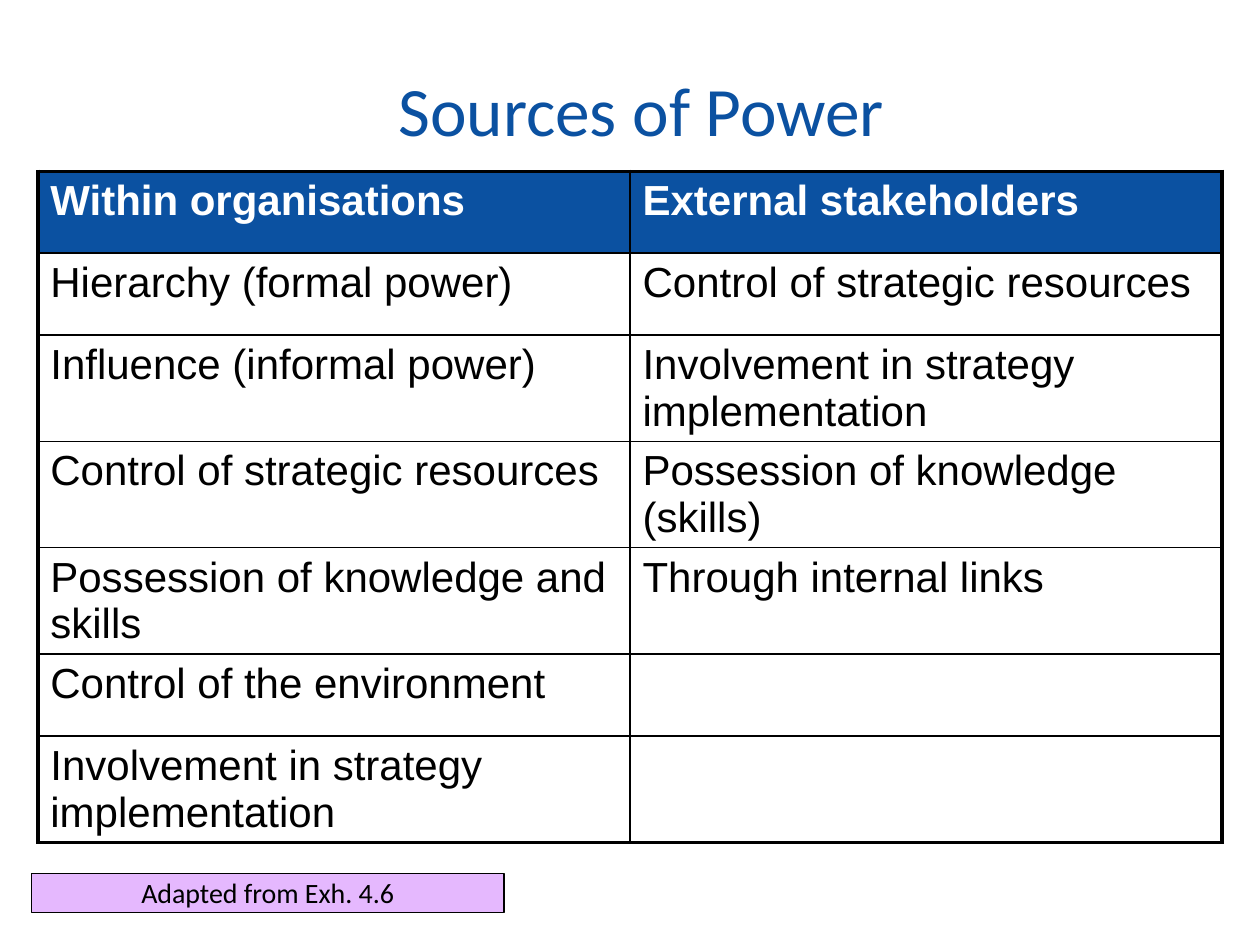
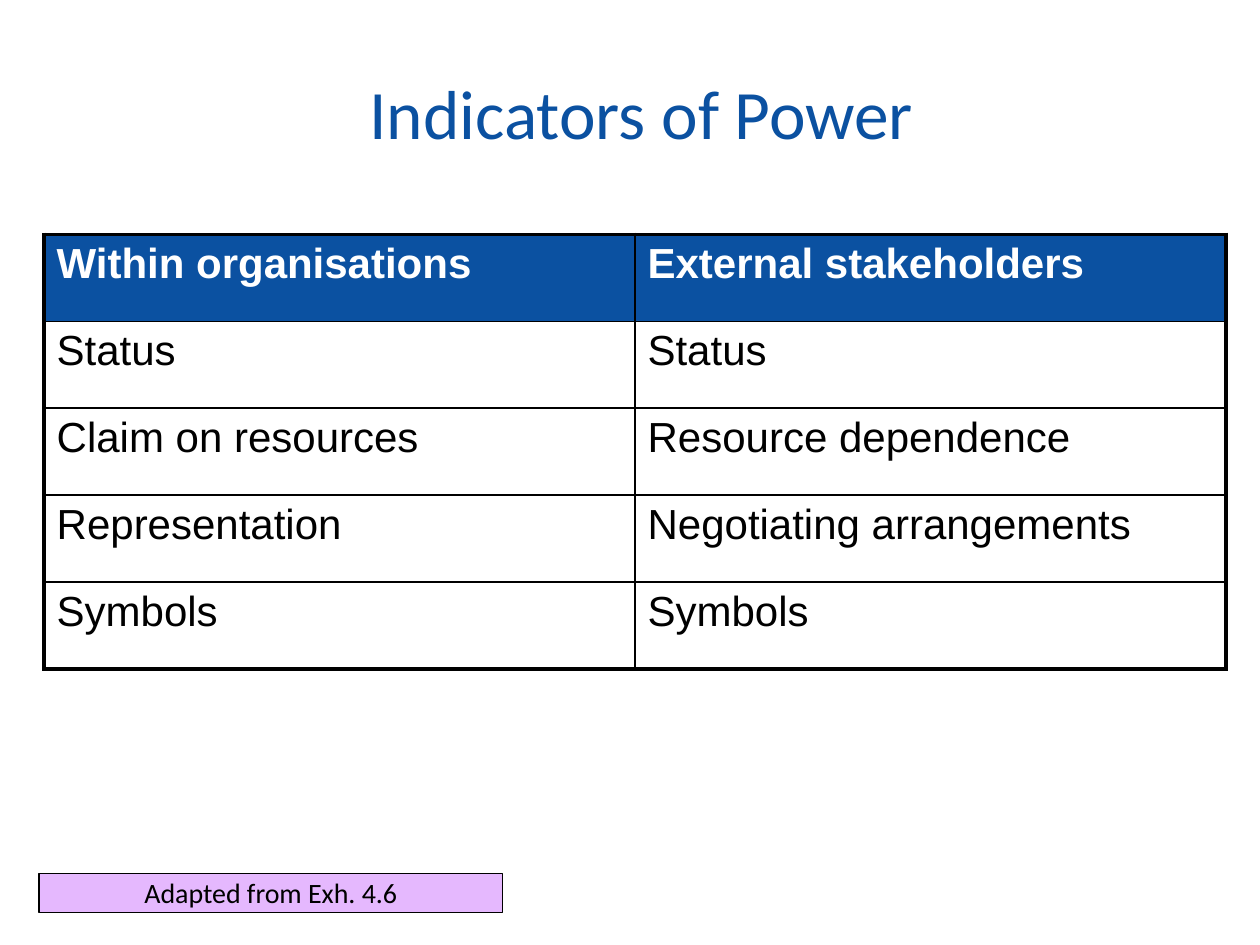
import dataclasses
import typing

import lxml.etree
import pptx
import pptx.dml.color
import pptx.enum.shapes
import pptx.enum.text
import pptx.oxml.ns
import pptx.util

Inches = pptx.util.Inches
Pt = pptx.util.Pt
RGBColor = pptx.dml.color.RGBColor
Align = pptx.enum.text.PP_ALIGN
Anchor = pptx.enum.text.MSO_ANCHOR
qn = pptx.oxml.ns.qn

BLUE = RGBColor(0x0B, 0x51, 0xA1)
LILAC = RGBColor(0xE5, 0xB8, 0xFE)
BLACK = RGBColor(0, 0, 0)
WHITE = RGBColor(0xFF, 0xFF, 0xFF)
THICK, THIN = Pt(2.25), Pt(1)

HEAD = ("Within organisations", "External stakeholders")
SOURCE = "Adapted from Exh. 4.6"


@dataclasses.dataclass(frozen=True)
class Grid:
    left: float
    top: float
    col: float
    rows: tuple[tuple[str, str], ...]
    heights: tuple[float, ...]


@dataclasses.dataclass(frozen=True)
class Page:
    title: str
    top: float
    grid: Grid
    tag_left: float
    tag_width: float


PAGES = (
    Page("Sources of Power", 0.51, Grid(0.3, 1.36, 4.7, (
        HEAD,
        ("Hierarchy (formal power)", "Control of strategic resources"),
        ("Influence (informal power)", "Involvement in strategy implementation"),
        ("Control of strategic resources", "Possession of knowledge (skills)"),
        ("Possession of knowledge and skills", "Through internal links"),
        ("Control of the environment", ""),
        ("Involvement in strategy implementation", ""),
    ), (0.65, 0.65, 0.69, 0.69, 0.69, 0.65, 0.69)), 0.25, 3.75),
    Page("Indicators of Power", 0.53, Grid(0.35, 1.86, 4.69, (
        HEAD,
        ("Status", "Status"),
        ("Claim on resources", "Resource dependence"),
        ("Representation", "Negotiating arrangements"),
        ("Symbols", "Symbols"),
    ), (0.69,) * 5), 0.31, 3.68),
)


def write(frame: typing.Any, text: str, *, font: str, size: float,
          color: RGBColor, bold: bool = False,
          align: Align = Align.LEFT) -> None:
    par = frame.paragraphs[0]
    par.alignment = align
    par.font.size = Pt(size)
    if not text:
        return
    run = par.add_run()
    run.text = text
    run.font.name = font
    run.font.size = Pt(size)
    run.font.bold = bold
    run.font.color.rgb = color


def edge(cell: typing.Any, widths: dict[str, int]) -> None:
    """Draw the cell borders, keyed by side: L, R, T, B."""
    props = cell._tc.get_or_add_tcPr()
    for side, width in widths.items():
        line = lxml.etree.SubElement(props, qn(f"a:ln{side}"), w=str(width))
        fill = lxml.etree.SubElement(line, qn("a:solidFill"))
        lxml.etree.SubElement(fill, qn("a:srgbClr"), val=str(BLACK))


def add_title(slide: typing.Any, page: Page) -> None:
    title = slide.shapes.title
    title.left, title.top = Inches(0.59), Inches(page.top)
    title.width, title.height = Inches(9), Inches(0.71)
    frame = title.text_frame
    frame.auto_size = pptx.enum.text.MSO_AUTO_SIZE.NONE
    frame.vertical_anchor = Anchor.MIDDLE
    write(frame, page.title, font="Calibri", size=39.6, color=BLUE,
          align=Align.CENTER)


def add_grid(slide: typing.Any, grid: Grid) -> None:
    last, end = len(grid.rows) - 1, len(HEAD) - 1
    table = slide.shapes.add_table(
        len(grid.rows), len(HEAD), Inches(grid.left), Inches(grid.top),
        Inches(grid.col * len(HEAD)), Inches(sum(grid.heights))).table
    table.first_row = table.horz_banding = False
    for col in table.columns:
        col.width = Inches(grid.col)
    for r, (row, height) in enumerate(zip(grid.rows, grid.heights)):
        table.rows[r].height = Inches(height)
        for c, text in enumerate(row):
            cell = table.cell(r, c)
            edge(cell, {"L": THICK if c == 0 else THIN,
                        "R": THICK if c == end else THIN,
                        "T": THICK if r == 0 else THIN,
                        "B": THICK if r == last else THIN})
            head = r == 0
            if head:
                cell.fill.solid()
                cell.fill.fore_color.rgb = BLUE
            else:
                cell.fill.background()
            write(cell.text_frame, text, font="Arial", size=24, bold=head,
                  color=WHITE if head else BLACK)


def add_tag(slide: typing.Any, page: Page) -> None:
    tag = slide.shapes.add_shape(
        pptx.enum.shapes.MSO_SHAPE.RECTANGLE, Inches(page.tag_left),
        Inches(6.93), Inches(page.tag_width), Inches(0.31))
    tag.shadow.inherit = False
    tag.fill.solid()
    tag.fill.fore_color.rgb = LILAC
    tag.line.color.rgb = BLACK
    tag.line.width = Pt(0.75)
    frame = tag.text_frame
    frame.word_wrap = False
    frame.vertical_anchor = Anchor.MIDDLE
    write(frame, SOURCE, font="Calibri", size=16, color=BLACK,
          align=Align.CENTER)


def main() -> None:
    deck = pptx.Presentation()
    deck.slide_width, deck.slide_height = Inches(10), Inches(7.5)
    layout = deck.slide_layouts.get_by_name("Title Only")
    for page in PAGES:
        slide = deck.slides.add_slide(layout)
        add_title(slide, page)
        add_grid(slide, page.grid)
        add_tag(slide, page)
    deck.save("out.pptx")


if __name__ == "__main__":
    main()
